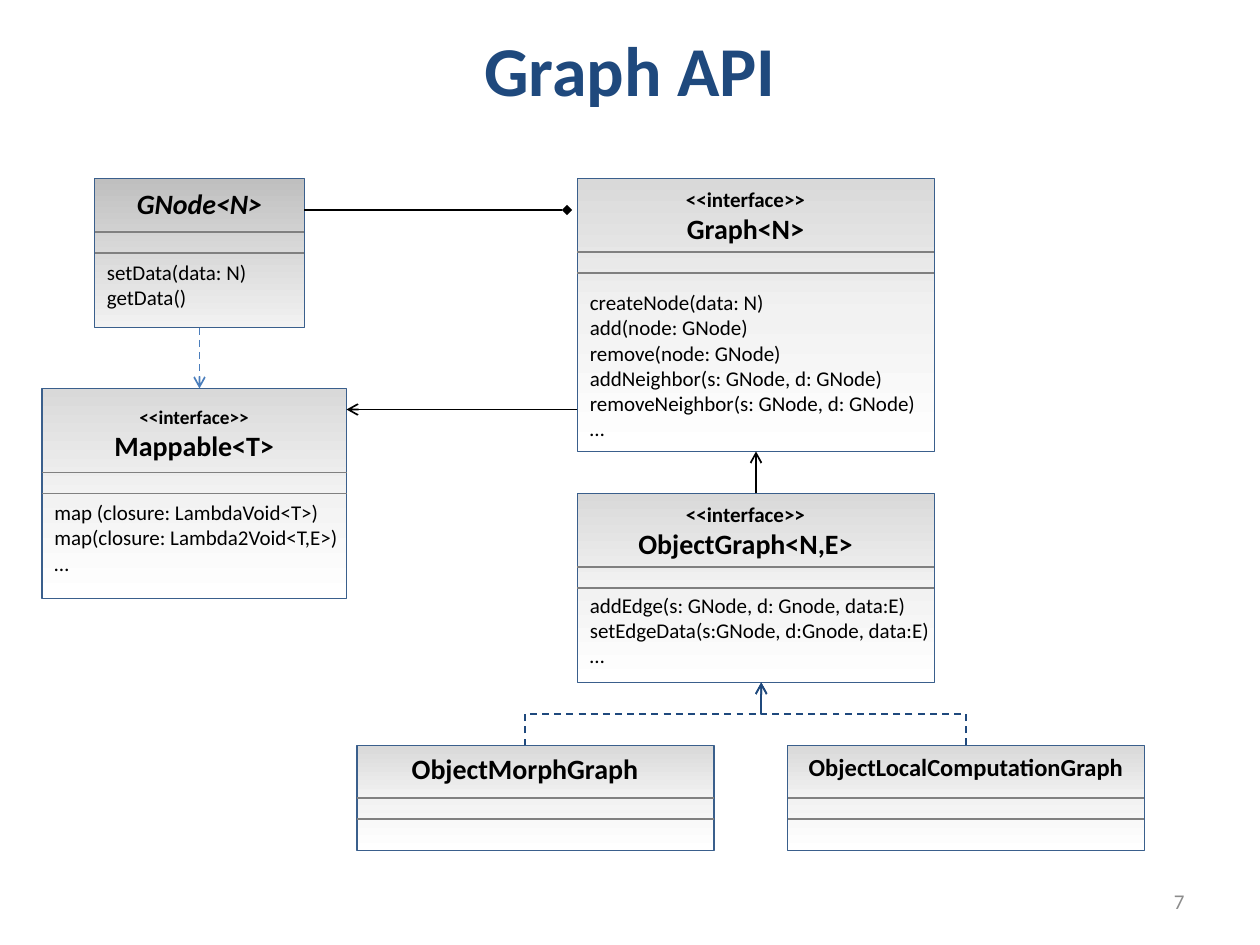
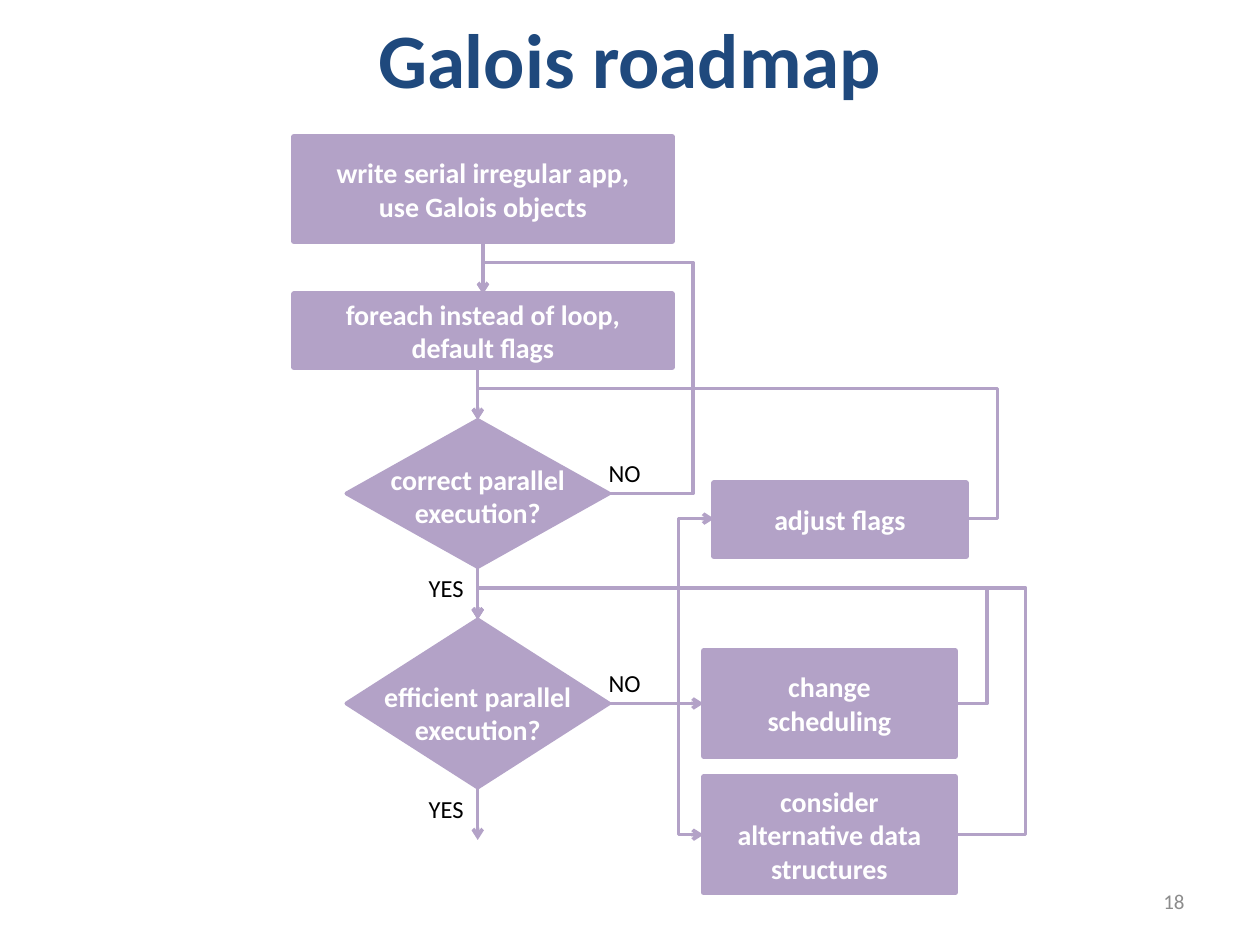
from copy import deepcopy

from lxml import etree
from pptx import Presentation
from pptx.dml.color import RGBColor
from pptx.enum.dml import MSO_LINE
from pptx.enum.shapes import MSO_CONNECTOR, MSO_SHAPE
from pptx.enum.text import MSO_ANCHOR, PP_ALIGN
from pptx.oxml.ns import qn
from pptx.util import Emu, Pt

EMU_PER_PX = 7620  # 120 px to the inch
SLIDE_WIDTH, SLIDE_HEIGHT = 1200, 900
TITLE_ONLY = 5
FONT = "Calibri"
LEFT, CENTER, RIGHT = PP_ALIGN.LEFT, PP_ALIGN.CENTER, PP_ALIGN.RIGHT
TOP, MIDDLE = MSO_ANCHOR.TOP, MSO_ANCHOR.MIDDLE
RECTANGLE, DIAMOND = MSO_SHAPE.RECTANGLE, MSO_SHAPE.DIAMOND
STRAIGHT, ELBOW = MSO_CONNECTOR.STRAIGHT, MSO_CONNECTOR.ELBOW
DASH = MSO_LINE.DASH

COLORS = {
    "navy": "1F497D", "black": "000000", "white": "FFFFFF", "page": "8C8C8C",
    "border": "3A5F8C", "divider": "808080", "realizes": "4B7EBC", "flow": "B3A2C7",
}
INTERFACE_SHADES = ("D9D9D9", "F2F2F2", "FFFFFF")
ABSTRACT_SHADES = ("BFBFBF", "D9D9D9", "F2F2F2")


def px(length):
    return Emu(round(length * EMU_PER_PX))


def rgb(name):
    return RGBColor.from_string(COLORS.get(name, name))


def write(frame, lines, color="black", align=LEFT, anchor=TOP, **font_format):
    """Fill a text frame with (text, size) lines, one paragraph each."""
    frame.word_wrap = True
    frame.vertical_anchor = anchor
    for index, (text, size) in enumerate(lines):
        paragraph = frame.add_paragraph() if index else frame.paragraphs[0]
        paragraph.alignment = align
        run = paragraph.add_run()
        run.text = text
        run.font.color.rgb = rgb(color)
        for name, value in {"name": FONT, "size": Pt(size), **font_format}.items():
            setattr(run.font, name, value)


def add_text(slide, box, lines, **text_format):
    shape = slide.shapes.add_textbox(*map(px, box))
    write(shape.text_frame, lines, **text_format)


def add_box(slide, preset, box, line_color, line_width):
    shape = slide.shapes.add_shape(preset, *map(px, box))
    shape.shadow.inherit = False
    shape.line.color.rgb = rgb(line_color)
    shape.line.width = Pt(line_width)
    return shape


def shade(shape, shades):
    """Fill downwards through three evenly spaced colours."""
    shape.fill.gradient()
    stop_list = shape.element.spPr.find(".//" + qn("a:gsLst"))
    stop_list.insert(1, deepcopy(stop_list[0]))
    shape.fill.gradient_angle = 270
    for index, (stop, color) in enumerate(zip(shape.fill.gradient_stops, shades)):
        stop.position = index / 2
        stop.color.rgb = rgb(color)


def bend(connector, points):
    """Set the elbows of a connector whose first segment runs along its x axis."""
    start, end = points[0], points[-1]
    geometry = connector.element.spPr.find(qn("a:prstGeom"))
    geometry.set("prst", f"bentConnector{len(points) - 1}")
    guides = geometry.find(qn("a:avLst"))
    for number, via in enumerate(points[1:-2], 1):
        axis = (number + 1) % 2
        share = (via[axis] - start[axis]) / (end[axis] - start[axis])
        etree.SubElement(guides, qn("a:gd"), name=f"adj{number}",
                         fmla=f"val {round(share * 100000)}")


def connect(slide, *points, color="black", width=1, dash=None, end="arrow"):
    """Draw a straight or right-angled connector through the points."""
    upright = len(points) > 2 and points[0][0] == points[1][0]
    if upright:
        # Turn the route a quarter about its centre; the rotation turns it back.
        center_x, center_y = [(a + b) / 2 for a, b in zip(points[0], points[-1])]
        points = [(center_x + center_y - y, center_y + x - center_x) for x, y in points]
    kind = ELBOW if len(points) > 2 else STRAIGHT
    connector = slide.shapes.add_connector(kind, *map(px, points[0] + points[-1]))
    if kind == ELBOW:
        bend(connector, points)
    if upright:
        connector.rotation = 270
    connector.line.color.rgb = rgb(color)
    connector.line.width = Pt(width)
    if dash:
        connector.line.dash_style = dash
    properties = connector.element.spPr
    if end:
        etree.SubElement(properties.find(qn("a:ln")), qn("a:tailEnd"), type=end)
    etree.SubElement(properties, qn("a:effectLst"))


def start_slide(presentation, title, title_size, title_top, number):
    slide = presentation.slides.add_slide(presentation.slide_layouts[TITLE_ONLY])
    shape = slide.shapes.title
    shape.left, shape.top, shape.width, shape.height = map(px, (60, title_top, 1080, 150))
    write(shape.text_frame, [(title, title_size)], color="navy",
          align=CENTER, anchor=MIDDLE, bold=True)
    add_text(slide, (860, 834, 280, 48), [(number, 12)], color="page",
             align=RIGHT, anchor=MIDDLE)
    return slide


def class_box(slide, box, divider, heading, members=(), heading_at=(0, 0),
              heading_width=None, members_at=20, shades=INTERFACE_SHADES, italic=False):
    """Draw a class; divider is the first rule's offset, members_at counts from it."""
    left, top, width, height = box
    shade(add_box(slide, RECTANGLE, box, "border", 1), shades)
    for y in (top + divider, top + divider + 20):
        connect(slide, (left, y), (left + width, y), color="divider", width=0.75, end=None)
    add_text(slide, (left + heading_at[0], top + heading_at[1], heading_width or width, 45),
             heading, align=CENTER, bold=True, italic=italic)
    if members:
        add_text(slide, (left, top + divider + members_at, width + 10, 60),
                 [(member, 12) for member in members])


def graph_api_slide(presentation):
    slide = start_slide(presentation, "Graph API", 40, -10, "7")
    stereotype = "<<interface>>"
    class_box(slide, (550, 170, 340, 260), 70, [(stereotype, 12), ("Graph<N>", 16)],
              ["createNode(data: N)", "add(node: GNode)", "remove(node: GNode)",
               "addNeighbor(s: GNode, d: GNode)", "removeNeighbor(s: GNode, d: GNode)", "…"],
              heading_at=(20, 2), heading_width=280, members_at=30)
    class_box(slide, (90, 170, 200, 142), 51, [("GNode<N>", 16)],
              ["setData(data: N)", "getData()"], heading_at=(0, 2),
              shades=ABSTRACT_SHADES, italic=True)
    class_box(slide, (550, 470, 340, 180), 70, [(stereotype, 12), ("ObjectGraph<N,E>", 16)],
              ["addEdge(s: GNode, d: Gnode, data:E)", "setEdgeData(s:GNode, d:Gnode, data:E)", "…"],
              heading_at=(20, 2), heading_width=280, members_at=18)
    class_box(slide, (40, 370, 290, 200), 80, [(stereotype, 11), ("Mappable<T>", 16)],
              ["map (closure: LambdaVoid<T>)", "map(closure: Lambda2Void<T,E>)", "…"],
              heading_at=(0, 10))
    class_box(slide, (340, 710, 340, 100), 50, [("ObjectMorphGraph", 16)],
              heading_at=(20, 0), heading_width=280)
    class_box(slide, (750, 710, 340, 100), 50, [("ObjectLocalComputationGraph", 14)])

    connect(slide, (290, 200), (540, 200), end="diamond")
    connect(slide, (550, 390), (330, 390))
    connect(slide, (720, 470), (720, 430))
    connect(slide, (190, 312), (190, 370), color="realizes", dash=DASH)
    for x in (500, 920):
        connect(slide, (x, 710), (x, 680), (725, 680), (725, 650), color="navy", dash=DASH)


def flow_node(slide, preset, box, line_width):
    shape = add_box(slide, preset, box, "flow", line_width)
    shape.fill.solid()
    shape.fill.fore_color.rgb = rgb("flow")
    return shape


def step(slide, box, text):
    frame = flow_node(slide, RECTANGLE, box, 3).text_frame
    frame.margin_left = frame.margin_right = px(27)
    frame.margin_top = frame.margin_bottom = 0
    write(frame, [(text, 16)], color="white", align=CENTER, anchor=MIDDLE, bold=True)


def decision(slide, box, text, text_drop):
    left, top, width, height = box
    flow_node(slide, DIAMOND, box, 2.25)
    add_text(slide, (left + 20, top + text_drop, width - 40, height), [(text, 16)],
             color="white", align=CENTER, anchor=MIDDLE, bold=True)
    for answer, x, y in (("NO", left + 230, top + height // 2 - 40),
                         ("YES", left + 60, top + height)):
        add_text(slide, (x, y, 70, 41), [(answer, 14)], align=CENTER)


def roadmap_slide(presentation):
    slide = start_slide(presentation, "Galois roadmap", 44, -20, "18")
    step(slide, (280, 130, 360, 100), "write serial irregular app, use Galois objects")
    step(slide, (280, 280, 360, 70), "foreach instead of loop, default flags")
    step(slide, (680, 460, 240, 70), "adjust flags")
    step(slide, (670, 620, 240, 100), "change scheduling")
    step(slide, (670, 740, 240, 110), "consider alternative data structures")
    decision(slide, (330, 400, 250, 140), "correct parallel execution?", 2)
    decision(slide, (330, 590, 250, 160), "efficient parallel execution?", 9)

    foreach_entry, correct_entry, efficient_entry = (460, 280), (455, 400), (455, 590)
    inefficient = (580, 670)
    routes = [
        [(460, 230), foreach_entry],
        [(455, 350), correct_entry],
        [(455, 540), efficient_entry],
        [(455, 750), (455, 800)],
        [inefficient, (670, 670)],
        [inefficient, (646, 670), (646, 494), (680, 494)],
        [inefficient, (646, 670), (646, 795), (670, 795)],
    ]
    # Loops back: start, x of the riser, y of the return line, entry point.
    for start, riser, back, entry in (
        ((580, 470), 660, 250, foreach_entry),
        ((920, 494), 950, 370, correct_entry),
        ((910, 670), 940, 560, efficient_entry),
        ((910, 795), 977, 560, efficient_entry),
    ):
        routes.append([start, (riser, start[1]), (riser, back), (entry[0], back), entry])
    for route in routes:
        connect(slide, *route, color="flow", width=2)


def main():
    presentation = Presentation()
    presentation.slide_width, presentation.slide_height = px(SLIDE_WIDTH), px(SLIDE_HEIGHT)
    graph_api_slide(presentation)
    roadmap_slide(presentation)
    presentation.save("out.pptx")


if __name__ == "__main__":
    main()
